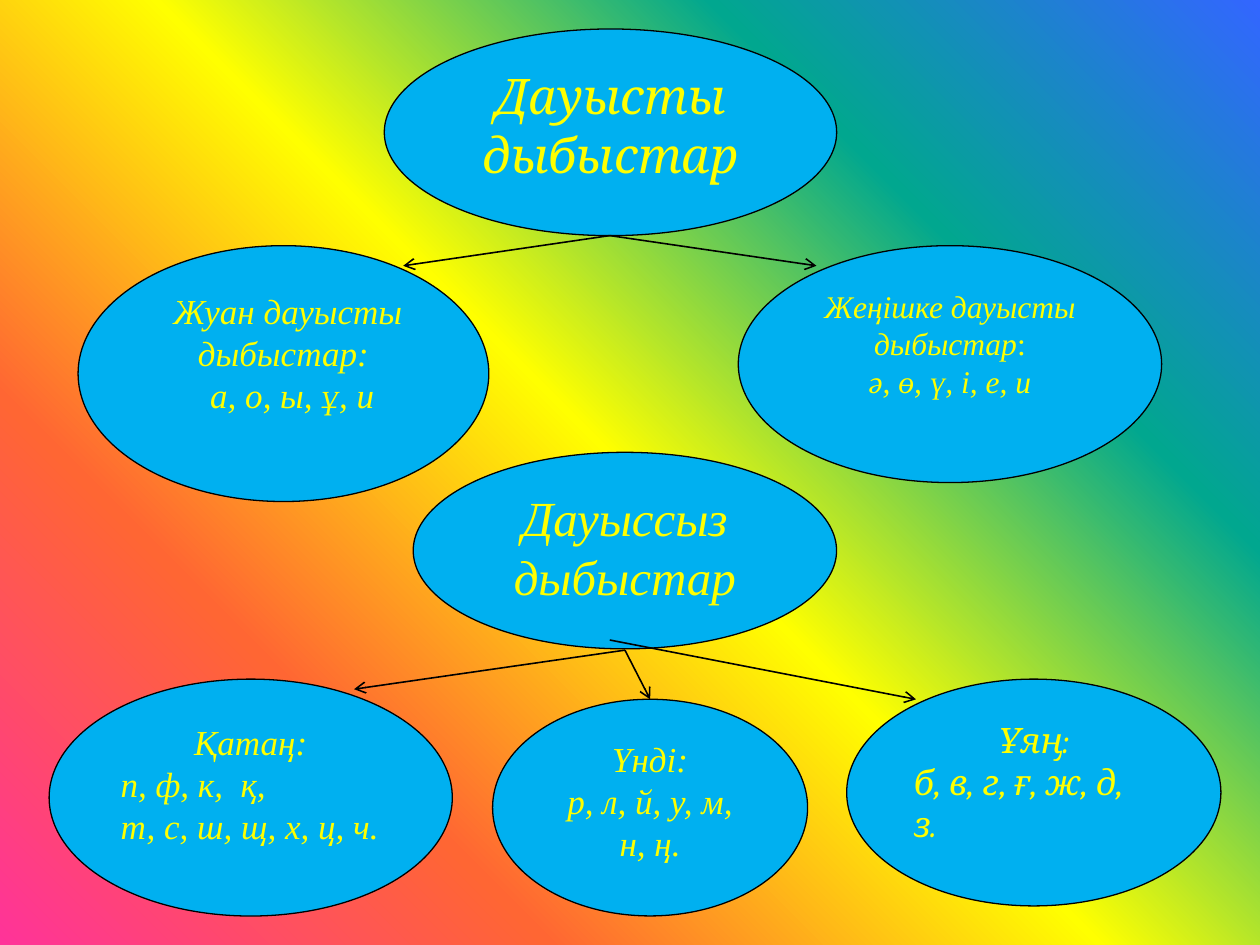
from dataclasses import dataclass

from lxml import etree
from pptx import Presentation
from pptx.dml.color import RGBColor
from pptx.enum.shapes import MSO_CONNECTOR, MSO_SHAPE
from pptx.enum.text import MSO_ANCHOR, PP_ALIGN
from pptx.oxml.ns import qn
from pptx.util import Inches, Pt


def rgb(value):
    return RGBColor.from_string(value)


@dataclass
class Para:
    text: str
    align: PP_ALIGN = PP_ALIGN.CENTER
    indent: float = 0  # first line, inches
    after: float = 0  # points
    upright: str = ""  # ending that is not italic


class SoundChart:
    FILL, LINE, TEXT = "00B0F0", "000000", "FFFF00"
    SERIF, TITLE = "Times New Roman", "Cambria"

    def __init__(self, prs):
        self.prs = prs
        self.s = prs.slides.add_slide(prs.slide_layouts[6])

    def x(self, percent):
        return int(self.prs.slide_width * percent / 100)

    def y(self, percent):
        return int(self.prs.slide_height * percent / 100)

    def background(self, colors, angle):
        """Gradient with evenly spaced stops; angle runs clockwise."""
        fill = self.s.background.fill
        fill.gradient()
        grad = self.s.background._cSld.find(".//" + qn("a:gradFill"))
        stops = grad.find(qn("a:gsLst"))
        for gs in list(stops):
            stops.remove(gs)
        for i, color in enumerate(colors):
            pos = str(i * 100000 // (len(colors) - 1))
            gs = etree.SubElement(stops, qn("a:gs"), pos=pos)
            etree.SubElement(gs, qn("a:srgbClr"), val=color)
        lin = grad.find(qn("a:lin"))
        lin.set("ang", str(angle * 60000))
        lin.set("scaled", "0")

    def ellipse(self, left, top, width, height, paras, size, font=SERIF):
        sp = self.s.shapes.add_shape(MSO_SHAPE.OVAL, self.x(left), self.y(top),
                                     self.x(width), self.y(height))
        sp.shadow.inherit = False
        sp.fill.solid()
        sp.fill.fore_color.rgb = rgb(self.FILL)
        sp.line.color.rgb = rgb(self.LINE)
        sp.line.width = Pt(0.75)
        tf = sp.text_frame
        tf.word_wrap = True
        tf.vertical_anchor = MSO_ANCHOR.TOP
        for i, para in enumerate(paras):
            p = tf.add_paragraph() if i else tf.paragraphs[0]
            p.text = para.text
            p.alignment = para.align
            p.space_after = Pt(para.after)
            if para.indent:
                p._p.get_or_add_pPr().set("indent", str(Inches(para.indent)))
            if para.upright:
                p.add_run().text = para.upright
            for r in p.runs:
                r.font.name = font
                r.font.size = Pt(size)
                r.font.italic = r.text != para.upright
                r.font.color.rgb = rgb(self.TEXT)

    def arrow(self, start, end):
        sp = self.s.shapes.add_connector(
            MSO_CONNECTOR.STRAIGHT, self.x(start[0]), self.y(start[1]),
            self.x(end[0]), self.y(end[1]))
        sp.line.color.rgb = rgb(self.LINE)
        sp.line.width = Pt(0.9)
        etree.SubElement(sp.line._get_or_add_ln(), qn("a:tailEnd"), type="arrow")
        etree.SubElement(sp._element.spPr, qn("a:effectLst"))


def main():
    prs = Presentation()
    prs.slide_width, prs.slide_height = Inches(10), Inches(7.5)
    chart = SoundChart(prs)
    chart.background(["FF3399", "FF6633", "FFFF00", "01A78F", "3366FF"], 315)

    # Vowels
    chart.ellipse(30.5, 3.07, 35.9, 21.87,
                  [Para("Дауысты дыбыстар", after=10)], 28, chart.TITLE)
    chart.ellipse(6.2, 26, 32.6, 27.07,
                  [Para("Жуан дауысты дыбыстар:", indent=0.07),
                   Para("а, о, ы, ұ, и", indent=0.14)], 20)
    chart.ellipse(58.6, 26, 33.6, 25.07,
                  [Para("Жеңішке дауысты дыбыстар", upright=":"),
                   Para("ә, ө, ү, і, е, и")], 18)

    # Consonants
    chart.ellipse(32.8, 47.87, 33.6, 20.8,
                  [Para("Дауыссыз дыбыстар", after=10)], 28)
    chart.ellipse(3.9, 71.87, 32, 25.07,
                  [Para("Қатаң:"),
                   Para("п, ф, к,  қ,\vт, с, ш, щ, х, ц, ч.", PP_ALIGN.LEFT)], 20)
    chart.ellipse(39.1, 74, 25, 22.93,
                  [Para("Үнді:"), Para("р, л, й, у, м, н, ң.")], 20)
    chart.ellipse(67.2, 71.87, 29.7, 24,
                  [Para("Ұяң:"), Para("б, в, г, ғ, ж, д, з.", PP_ALIGN.LEFT)],
                  20, chart.TITLE)

    # Arrows from each group to its kinds
    vowels, consonants = (48.4, 24.93), (49.6, 68.8)
    for start, end in [(vowels, (32, 28.13)), (vowels, (64.8, 28.13)),
                       (consonants, (28.1, 72.93)),
                       ((48.4, 67.73), (72.7, 74)),
                       (consonants, (51.6, 74))]:
        chart.arrow(start, end)

    prs.save("out.pptx")


if __name__ == "__main__":
    main()
